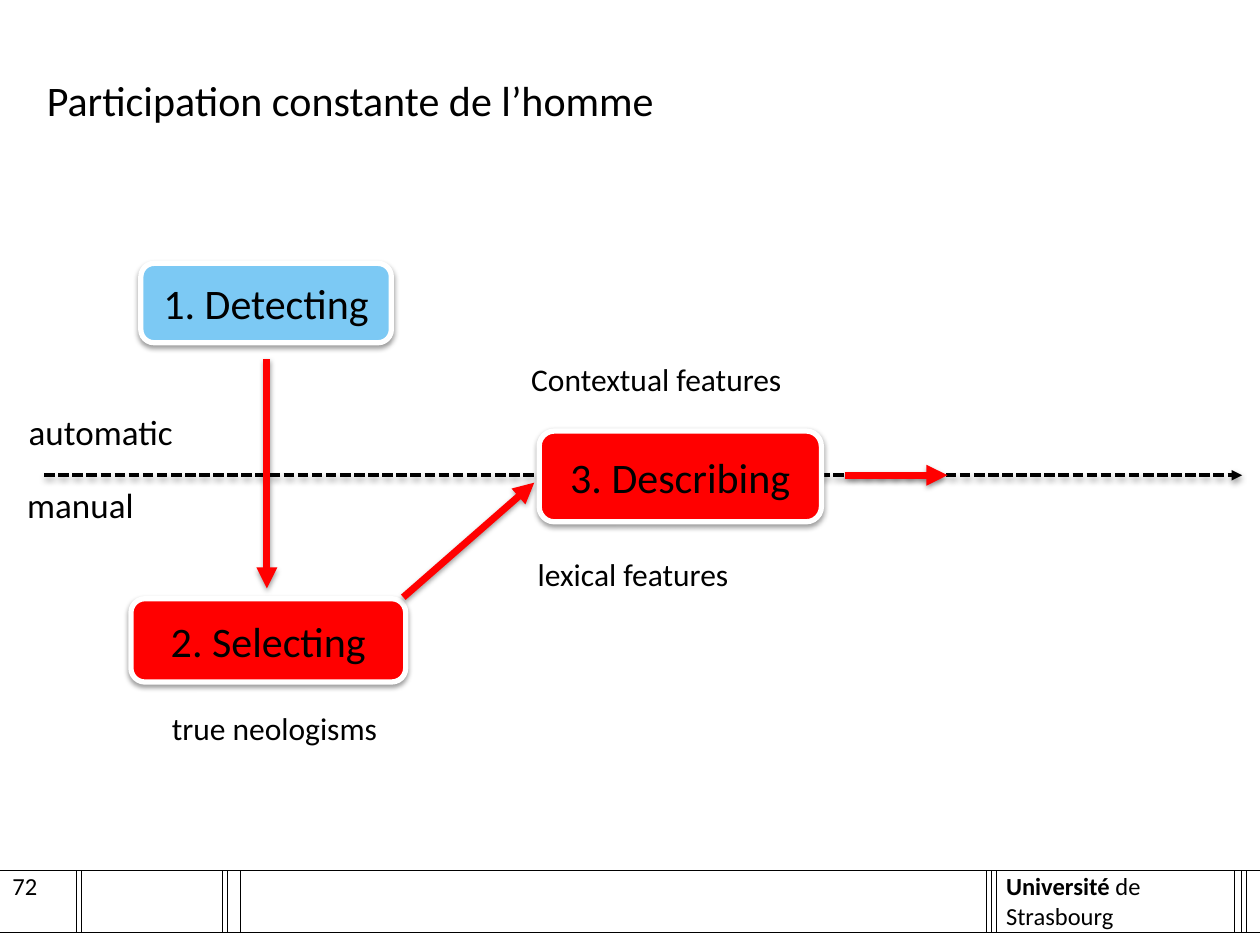
import pptx
import pptx.dml.color
import pptx.enum.dml
import pptx.enum.shapes
import pptx.enum.text
import pptx.oxml
import pptx.oxml.ns
import pptx.util
from lxml import etree

Cm = pptx.util.Cm
Pt = pptx.util.Pt
ALIGN = pptx.enum.text.PP_ALIGN
ANCHOR = pptx.enum.text.MSO_ANCHOR
FONT = "Calibri"
COLORS = {
    "text": "000000",
    "paper": "FFFFFF",
    "automatic": "7CC9F4",
    "manual": "FF0000",
}


def rgb(name):
    return pptx.dml.color.RGBColor.from_string(COLORS[name])


def add_xml(parent, tag, **attributes):
    child = etree.SubElement(parent, pptx.oxml.ns.qn(tag))
    for key, value in attributes.items():
        child.set(key, str(value))
    return child


def add_shadow(effects):
    shadow = add_xml(effects, "a:outerShdw", blurRad=Pt(3.1), dist=Pt(1.6),
                     dir=5400000, rotWithShape=0)
    color = add_xml(shadow, "a:srgbClr", val=COLORS["text"])
    add_xml(color, "a:alpha", val=38000)


def write(frame, text, size, align=ALIGN.LEFT):
    frame.text = text
    paragraph = frame.paragraphs[0]
    paragraph.alignment = align
    paragraph.font.size = Pt(size)
    paragraph.font.name = FONT
    paragraph.font.color.rgb = rgb("text")


def add_label(slide, text, left, top, width, height, size, align=ALIGN.LEFT):
    label = slide.shapes.add_textbox(Cm(left), Cm(top), Cm(width), Cm(height))
    label.text_frame.word_wrap = True
    write(label.text_frame, text, size, align)
    return label


def add_step(slide, text, left, top, width, height, color):
    step = slide.shapes.add_shape(
        pptx.enum.shapes.MSO_SHAPE.ROUNDED_RECTANGLE,
        Cm(left), Cm(top), Cm(width), Cm(height))
    step.fill.solid()
    step.fill.fore_color.rgb = rgb(color)
    step.line.color.rgb = rgb("paper")
    step.line.width = Pt(3)
    step.shadow.inherit = False
    add_shadow(step._element.spPr.find(pptx.oxml.ns.qn("a:effectLst")))
    step.text_frame.vertical_anchor = ANCHOR.MIDDLE
    write(step.text_frame, text, 24, ALIGN.CENTER)


def add_arrow(slide, start, end, color, width, dash=None):
    arrow = slide.shapes.add_connector(
        pptx.enum.shapes.MSO_CONNECTOR.STRAIGHT,
        *(Cm(value) for value in start + end))
    arrow.line.color.rgb = rgb(color)
    arrow.line.width = Pt(width)
    if dash:
        arrow.line.dash_style = dash
    add_xml(arrow.line._get_or_add_ln(), "a:tailEnd", type="triangle")
    add_shadow(add_xml(arrow._element.spPr, "a:effectLst"))


def format_cell(cell, borders):
    cell.margin_left = cell.margin_right = 0
    cell.margin_top = cell.margin_bottom = 0
    properties = cell._tc.get_or_add_tcPr()
    for side in borders:
        line = add_xml(properties, "a:ln" + side, w=Pt(0.5))
        add_xml(add_xml(line, "a:solidFill"), "a:srgbClr", val=COLORS["text"])
    cell.fill.solid()
    cell.fill.fore_color.rgb = rgb("paper")
    # Small end mark, so that an empty cell does not stretch its row
    add_xml(cell.text_frame.paragraphs[0]._p, "a:endParaRPr", sz=500)


def add_footer(slide):
    widths = [1.55, 0.1, 2.84, 0.08, 0.25, 15.04, 0.1, 0.1, 4.8, 0.15, 0.1, 0.29]
    heights = [0.74, 1.24, 0.25]
    last = len(widths) - 1
    frame = slide.shapes.add_table(len(heights), len(widths), 0, Cm(16.81),
                                   Cm(sum(widths)), Cm(sum(heights)))
    table = frame.table
    table.first_row = table.horz_banding = False
    for column, width in zip(table.columns, widths):
        column.width = Cm(width)
    for row, height in zip(table.rows, heights):
        row.height = Cm(height)

    # Only the middle row shows its column rules
    for index in range(len(widths)):
        sides = ("L" if index > 0 else "") + ("R" if index < last else "")
        for row, borders in enumerate(["B", sides + "TB", "T"]):
            format_cell(table.cell(row, index), borders)
    for row in (0, 2):
        table.cell(row, 0).merge(table.cell(row, last))

    # University name
    university = table.cell(1, 8)
    university.margin_left = Cm(0.2)
    university.margin_top = Cm(0.03)
    write(university.text_frame, "Université", 14)
    paragraph = university.text_frame.paragraphs[0]
    paragraph.runs[0].font.bold = True
    paragraph.add_run().text = " de Strasbourg"

    # Slide number
    number = add_label(slide, "72", 0, 17.48, 1.55, 0.76, 14)
    number.text_frame.vertical_anchor = ANCHOR.MIDDLE


def add_title(slide, text):
    title = slide.shapes.title
    title.left, title.top = Cm(0.69), Cm(1.37)
    title.width, title.height = Cm(20.47), Cm(1.8)
    title.text_frame.vertical_anchor = ANCHOR.TOP
    write(title.text_frame, text, 24)


def main():
    deck = pptx.Presentation()
    deck.slide_width, deck.slide_height = Cm(25.4), Cm(19.05)
    slide = deck.slides.add_slide(deck.slide_layouts[5])
    add_footer(slide)
    add_title(slide, "Participation constante de l’homme")

    # Boundary between automatic and manual work
    axis = 9.58
    add_arrow(slide, (0.89, axis), (25.04, axis), "text", 2,
              pptx.enum.dml.MSO_LINE.SQUARE_DOT)
    add_label(slide, "automatic", 0.33, 8.15, 6.73, 1.12, 20)
    add_label(slide, "manual", 0.3, 9.63, 3.2, 1.12, 20)

    # Steps
    add_step(slide, "1. Detecting", 2.84, 5.31, 5.05, 1.6, "automatic")
    add_step(slide, "2. Selecting", 2.64, 12.07, 5.54, 1.68, "manual")
    add_step(slide, "3. Describing", 10.87, 8.69, 5.69, 1.83, "manual")

    # Flow from step to step
    for start, end in [((5.38, 7.24), (5.38, 11.86)),
                       ((8.13, 12.04), (10.77, 9.73)),
                       ((17.04, axis), (19.1, axis))]:
        add_arrow(slide, start, end, "manual", 4)

    # Results of the steps
    for text, left, top, align in [
            ("true neologisms", 2.54, 14.17, ALIGN.CENTER),
            ("lexical features", 10.59, 11.07, ALIGN.LEFT),
            ("Contextual features", 10.46, 7.14, ALIGN.LEFT)]:
        add_label(slide, text, left, top, 5.99, 1.02, 18, align)

    deck.save("out.pptx")


if __name__ == "__main__":
    main()
